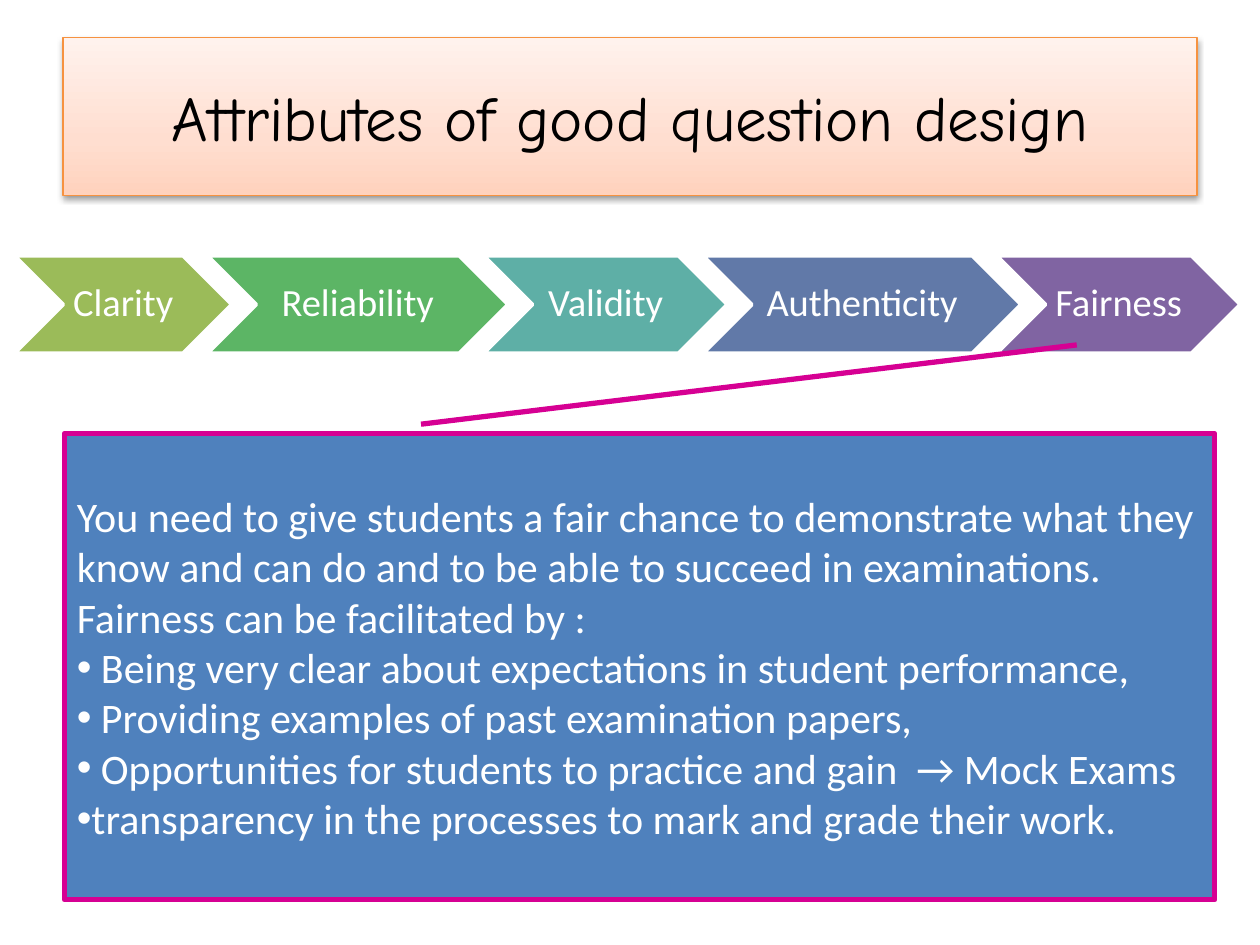
from copy import deepcopy
from lxml import etree
from pptx import Presentation
from pptx.dml.color import RGBColor
from pptx.enum import shapes, text
from pptx.oxml import ns
from pptx.util import Cm, Pt

WHITE = RGBColor(0xFF, 0xFF, 0xFF)
BLACK = RGBColor(0, 0, 0)
ORANGE = RGBColor(0xF6, 0x92, 0x40)
BLUE = RGBColor(0x4F, 0x81, 0xBD)
MAGENTA = RGBColor(0xD6, 0x00, 0x93)
PEACH = [
    (0, RGBColor(0xFF, 0xD2, 0xBD)),
    (0.35, RGBColor(0xFF, 0xDE, 0xD0)),
    (1, RGBColor(0xFF, 0xF2, 0xED)),
]
STEPS = [
    ("Clarity", 4.37, RGBColor(0x9B, 0xBB, 0x59)),
    ("Reliability", 6.05, RGBColor(0x5C, 0xB5, 0x65)),
    ("Validity", 4.9, RGBColor(0x5E, 0xAF, 0xA6)),
    ("Authenticity", 6.4, RGBColor(0x61, 0x79, 0xA8)),
    ("Fairness", 4.9, RGBColor(0x80, 0x64, 0xA2)),
]
INTRO = [
    "You need to give students a fair chance to demonstrate what they know "
    "and can do and to be able to succeed in examinations.",
    "Fairness can be facilitated by :",
]
BULLETS = [
    " Being very clear about expectations in student performance,",
    " Providing examples of past examination papers,",
    " Opportunities for students to practice and gain  → Mock Exams",
    "transparency in the processes to mark and grade their work.",
]


def style(p, size, color, name="Calibri"):
    for r in p.runs:
        r.font.size = Pt(size)
        r.font.name = name
        r.font.color.rgb = color


def paint(sp, fill, line, width):
    sp.shadow.inherit = False
    sp.fill.solid()
    sp.fill.fore_color.rgb = fill
    sp.line.color.rgb = line
    sp.line.width = Pt(width)


prs = Presentation()
prs.slide_width, prs.slide_height = Cm(25.4), Cm(19.05)
s = prs.slides.add_slide(prs.slide_layouts[5])

title = s.shapes.title
title.left, title.top, title.width, title.height = Cm(1.27), Cm(0.76), Cm(22.86), Cm(3.18)
title.text_frame.text = "Attributes of good question design"
title.text_frame.vertical_anchor = text.MSO_ANCHOR.MIDDLE
p = title.text_frame.paragraphs[0]
p.alignment = text.PP_ALIGN.CENTER
style(p, 36, BLACK, "Comic Neue")
title.fill.gradient()
title.fill.gradient_angle = 90
stops = title._element.spPr.find(".//" + ns.qn("a:gsLst"))
stops.append(deepcopy(stops[0]))
for stop, (position, color) in zip(title.fill.gradient_stops, PEACH):
    stop.position = position
    stop.color.rgb = color
title.line.color.rgb = ORANGE
title.line.width = Pt(0.75)
title.shadow.inherit = False
effects = title._element.spPr.find(ns.qn("a:effectLst"))
shadow = etree.SubElement(effects, ns.qn("a:outerShdw"), blurRad=str(Pt(3.1)),
                          dist=str(Pt(1.6)), dir="5400000", rotWithShape="0")
color = etree.SubElement(shadow, ns.qn("a:srgbClr"), val="000000")
etree.SubElement(color, ns.qn("a:alpha"), val="38000")

left, overlap = 0.3, 0.48
for label, width, color in STEPS:
    sp = s.shapes.add_shape(shapes.MSO_SHAPE.CHEVRON, Cm(left), Cm(5.16), Cm(width), Cm(1.96))
    paint(sp, color, WHITE, 2)
    tf = sp.text_frame
    tf.text = label
    tf.word_wrap = False
    tf.vertical_anchor = text.MSO_ANCHOR.MIDDLE
    tf.margin_left = tf.margin_right = tf.margin_top = tf.margin_bottom = Cm(0.08)
    p = tf.paragraphs[0]
    p.alignment = text.PP_ALIGN.CENTER
    p.line_spacing = 0.9
    style(p, 22, WHITE)
    left += width - overlap

callout = s.shapes.add_shape(shapes.MSO_SHAPE.LINE_CALLOUT_1, Cm(1.3), Cm(8.74), Cm(23.19), Cm(9.4))
for i, value in enumerate([-0.02, 0.31, -0.19, 0.88]):
    callout.adjustments[i] = value
paint(callout, BLUE, MAGENTA, 3)
tf = callout.text_frame
tf.text = "\n".join(INTRO + BULLETS)
tf.word_wrap = True
tf.vertical_anchor = text.MSO_ANCHOR.MIDDLE
for i, p in enumerate(tf.paragraphs):
    p.alignment = text.PP_ALIGN.LEFT
    style(p, 24, WHITE)
    if i >= len(INTRO):
        pPr = p._p.get_or_add_pPr()
        etree.SubElement(pPr, ns.qn("a:buFont"), typeface="Arial")
        etree.SubElement(pPr, ns.qn("a:buChar"), char="•")

prs.save("out.pptx")
